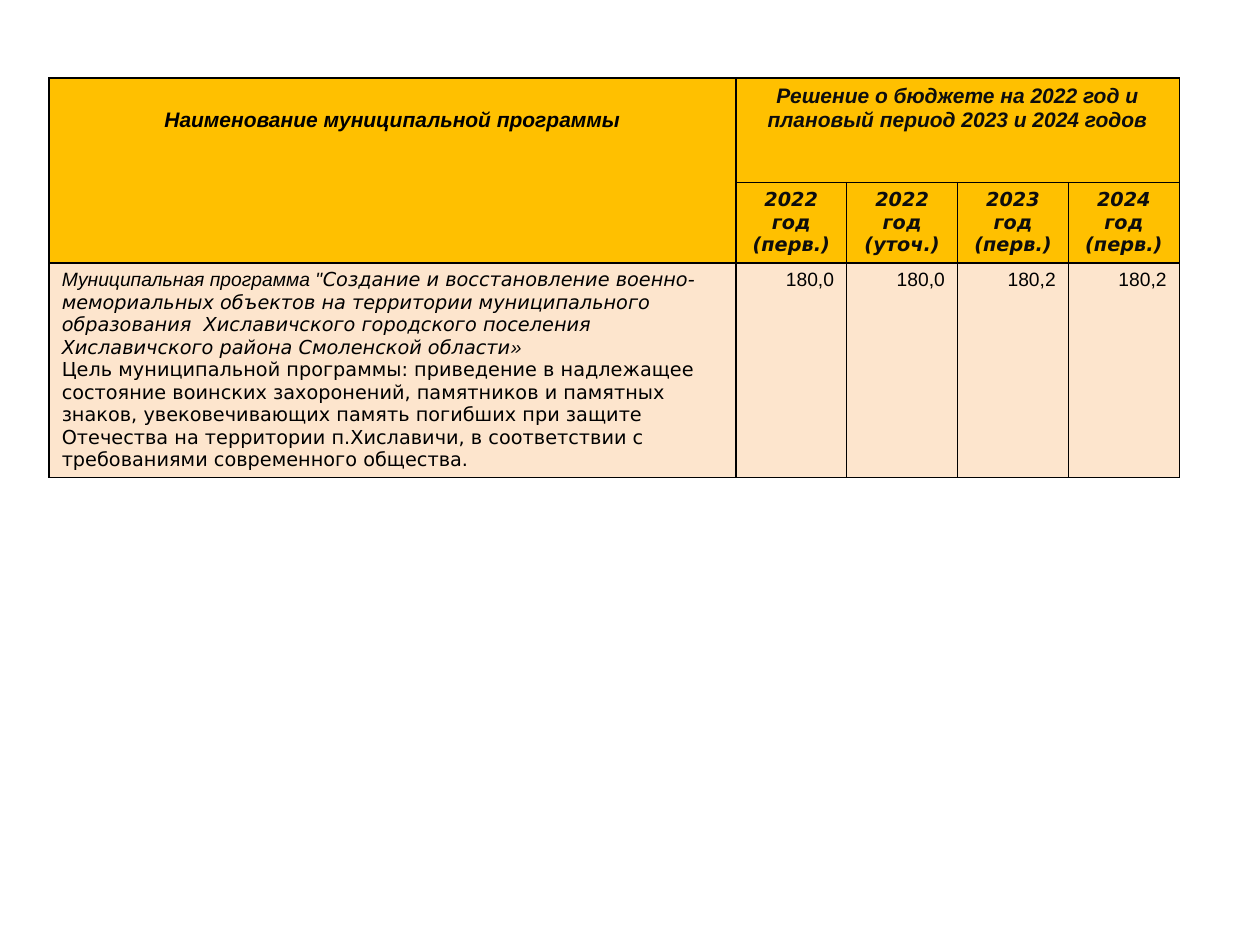
import pptx
import pptx.util
import pptx.dml.color
import pptx.enum.text
from lxml import etree
from pptx.oxml.ns import qn

Inches = pptx.util.Inches
ALIGN = pptx.enum.text.PP_ALIGN

ARIAL, DEJAVU = "Arial", "DejaVu Sans"
BLACK, NEAR_BLACK = "000000", "0D0D0D"
HEADER_FILL, BODY_FILL = "FFC000", "FDE5CD"

COLUMN_WIDTHS = [5.45] + [0.88] * 4
ROW_HEIGHTS = [0.83, 0.46, 1.62]

PROGRAM_HEADER = "Наименование муниципальной программы"
BUDGET_HEADER = "Решение о бюджете на 2022 год и плановый период 2023 и 2024 годов"
YEARS = ["2022 год (перв.)", "2022 год (уточ.)", "2023 год (перв.)", "2024 год (перв.)"]
AMOUNTS = ["180,0", "180,0", "180,2", "180,2"]
PROGRAM_NAME = [
    ("Муниципальная программа \"", ARIAL),
    ("Создание и восстановление военно-мемориальных объектов на территории "
     "муниципального образования  Хиславичского городского поселения "
     "Хиславичского района Смоленской области", DEJAVU),
    ("»", ARIAL),
]
PROGRAM_GOAL = (
    "Цель муниципальной программы: приведение в надлежащее состояние воинских "
    "захоронений, памятников и памятных знаков, увековечивающих память погибших "
    "при защите Отечества на территории п.Хиславичи, в соответствии с "
    "требованиями современного общества."
)


def color(value):
    return pptx.dml.color.RGBColor.from_string(value)


def style(paragraph, size, ink, align, bold=False, italic=False, face=None):
    paragraph.alignment = align
    font = paragraph.font
    font.size = pptx.util.Pt(size)
    font.bold, font.italic = bold, italic
    font.color.rgb = color(ink)
    if face:
        font.name = face


def write(cell, text, face, size, ink, align, bold=False, italic=False):
    paragraph = cell.text_frame.paragraphs[0]
    paragraph.text = text
    style(paragraph, size, ink, align, bold, italic, face)


def finish(cell, fill):
    properties = cell._tc.get_or_add_tcPr()
    for side in ("a:lnL", "a:lnR", "a:lnT", "a:lnB"):
        line = etree.SubElement(properties, qn(side), w=str(pptx.util.Pt(1)))
        solid = etree.SubElement(line, qn("a:solidFill"))
        etree.SubElement(solid, qn("a:srgbClr"), val=BLACK)
    cell.fill.solid()
    cell.fill.fore_color.rgb = color(fill)


presentation = pptx.Presentation()
presentation.slide_width, presentation.slide_height = Inches(10), Inches(7.5)
slide = presentation.slides.add_slide(presentation.slide_layouts[6])

budget = slide.shapes.add_table(
    len(ROW_HEIGHTS), len(COLUMN_WIDTHS), Inches(0.39), Inches(0.62),
    Inches(sum(COLUMN_WIDTHS)), Inches(sum(ROW_HEIGHTS)),
).table
budget.first_row = budget.horz_banding = False
for column, width in zip(budget.columns, COLUMN_WIDTHS):
    column.width = Inches(width)
for row, height in zip(budget.rows, ROW_HEIGHTS):
    row.height = Inches(height)

for row_index, row in enumerate(budget.rows):
    for cell in row.cells:
        finish(cell, HEADER_FILL if row_index < 2 else BODY_FILL)
budget.cell(0, 0).merge(budget.cell(1, 0))
budget.cell(0, 1).merge(budget.cell(0, 4))

budget.cell(0, 0).margin_top = Inches(0.24)
write(budget.cell(0, 0), PROGRAM_HEADER, ARIAL, 12, BLACK, ALIGN.CENTER, True, True)
write(budget.cell(0, 1), BUDGET_HEADER, ARIAL, 12, NEAR_BLACK, ALIGN.CENTER, True, True)
for index, (year, amount) in enumerate(zip(YEARS, AMOUNTS), start=1):
    write(budget.cell(1, index), year, DEJAVU, 11, NEAR_BLACK, ALIGN.CENTER, True, True)
    write(budget.cell(2, index), amount, ARIAL, 11, BLACK, ALIGN.RIGHT)

program = budget.cell(2, 0).text_frame
name = program.paragraphs[0]
style(name, 11, BLACK, ALIGN.LEFT, italic=True)
for text, face in PROGRAM_NAME:
    run = name.add_run()
    run.text = text
    run.font.name = face
goal = program.add_paragraph()
goal.text = PROGRAM_GOAL
style(goal, 11, BLACK, ALIGN.LEFT, face=DEJAVU)

presentation.save("out.pptx")
